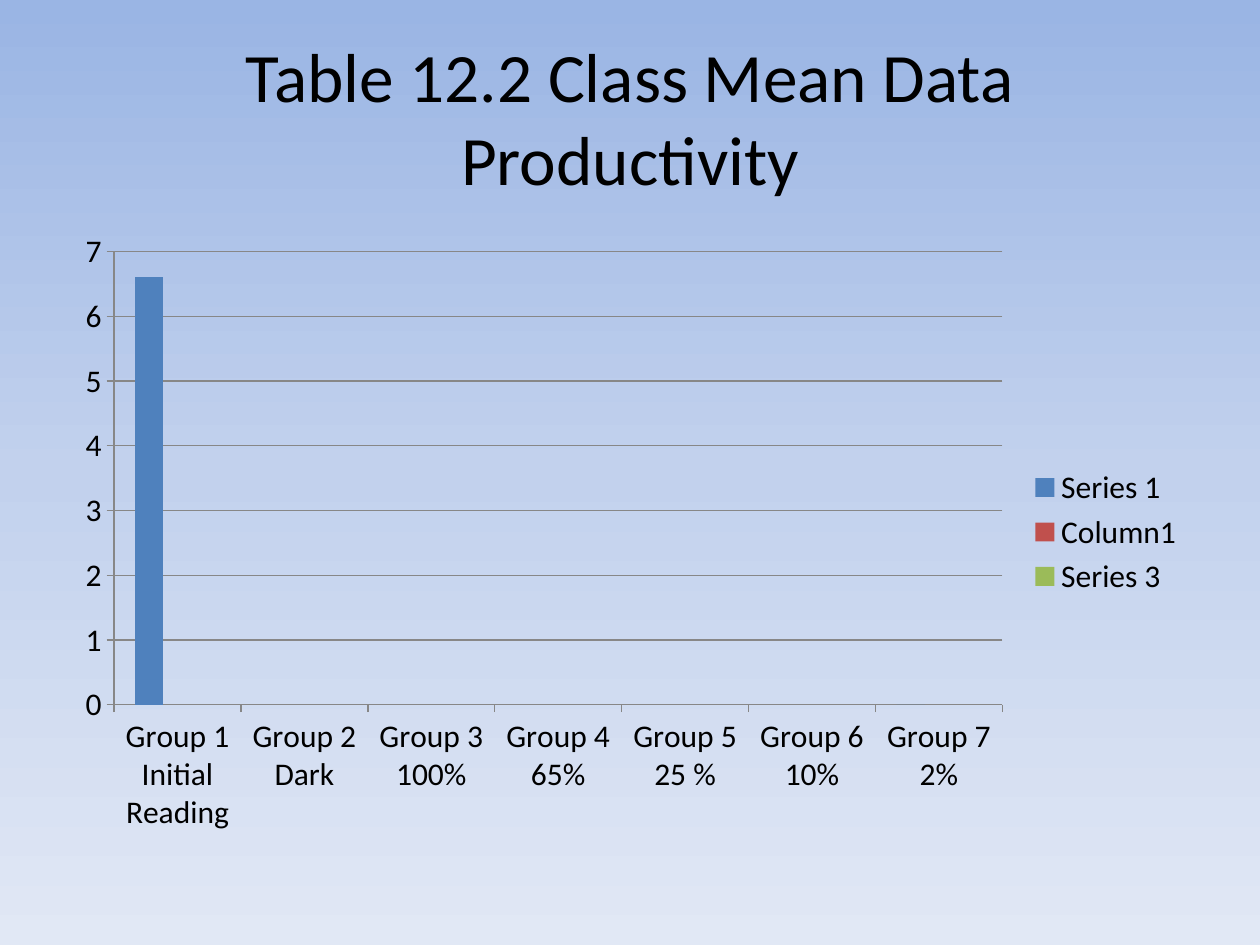
from copy import deepcopy
from dataclasses import dataclass

from pptx import Presentation
from pptx import util as u
from pptx.chart.data import CategoryChartData
from pptx.dml.color import RGBColor
from pptx.enum import chart as ch, text
from pptx.oxml.ns import qn

SCALE = 914400 // 126


@dataclass(frozen=True)
class Theme:
    font: str = "Calibri"
    ink: str = "000000"
    line: str = "878787"
    head: float = 39.6
    label: float = 18
    sky: tuple = ((0, "9AB5E4"), (0.5, "C2D1ED"), (1, "E1E8F5"))
    bars: tuple = ("4F81BD", "C0504D", "9BBB59")


THEME = Theme()
GROUPS = ("Group 1 Initial Reading", "Group 2 Dark", "Group 3 100%",
          "Group 4 65%", "Group 5 25 %", "Group 6 10%", "Group 7 2%")
BLANK = (None,) * len(GROUPS)
MEANS = {
    "Series 1": (6.6, None, None, None, None, None, 0),
    "Column1": BLANK,
    "Series 3": BLANK,
}


def px(*sizes):
    return [u.Emu(size * SCALE) for size in sizes]


def rgb(code):
    return RGBColor.from_string(code)


def style(font, size, color=THEME.ink):
    font.name = THEME.font
    font.size = u.Pt(size)
    font.color.rgb = rgb(color)


def write(shape, words, size=THEME.label, align=text.PP_ALIGN.LEFT,
          anchor=text.MSO_ANCHOR.TOP):
    frame = shape.text_frame
    frame.word_wrap = True
    frame.vertical_anchor = anchor
    para = frame.paragraphs[0]
    para.alignment = align
    run = para.add_run()
    run.text = words
    style(run.font, size)


def paint(slide):
    fill = slide.background.fill
    fill.gradient()
    fill.gradient_angle = 270
    stops = slide.element.find(".//" + qn("a:gsLst"))
    stops.insert(1, deepcopy(stops[0]))
    for stop, (place, color) in zip(fill.gradient_stops, THEME.sky):
        stop.position = place
        stop.color.rgb = rgb(color)


def add_title(slide, words, box):
    title = slide.shapes.title
    title.left, title.top, title.width, title.height = px(*box)
    write(title, words, size=THEME.head, align=text.PP_ALIGN.CENTER,
          anchor=text.MSO_ANCHOR.MIDDLE)


def trim(line):
    line.color.rgb = rgb(THEME.line)
    line.width = u.Pt(0.75)


def add_bars(slide, groups, means, box):
    data = CategoryChartData()
    data.categories = groups
    for name, values in means.items():
        data.add_series(name, values)
    chart = slide.shapes.add_chart(
        ch.XL_CHART_TYPE.COLUMN_CLUSTERED, *px(*box), data).chart
    style(chart.font, THEME.label)
    chart.has_title = False
    chart.has_legend = True
    chart.legend.position = ch.XL_LEGEND_POSITION.RIGHT
    chart.legend.include_in_layout = False

    plot = chart.plots[0]
    plot.vary_by_categories = False
    plot.gap_width = 150
    plot.overlap = 0
    for series, color in zip(plot.series, THEME.bars):
        series.format.fill.solid()
        series.format.fill.fore_color.rgb = rgb(color)

    for axis in (chart.category_axis, chart.value_axis):
        axis.major_tick_mark = ch.XL_TICK_MARK.OUTSIDE
        trim(axis.format.line)
    chart.value_axis.has_major_gridlines = True
    trim(chart.value_axis.major_gridlines.format.line)


def main():
    deck = Presentation()
    deck.slide_width, deck.slide_height = px(1260, 945)
    slide = deck.slides.add_slide(deck.slide_layouts.get_by_name("Title Only"))
    paint(slide)
    add_title(slide, "Table 12.2 Class Mean Data Productivity",
              (63, 38, 1134, 157))
    add_bars(slide, GROUPS, MEANS, (63, 220, 1134, 624))
    deck.save("out.pptx")


if __name__ == "__main__":
    main()
